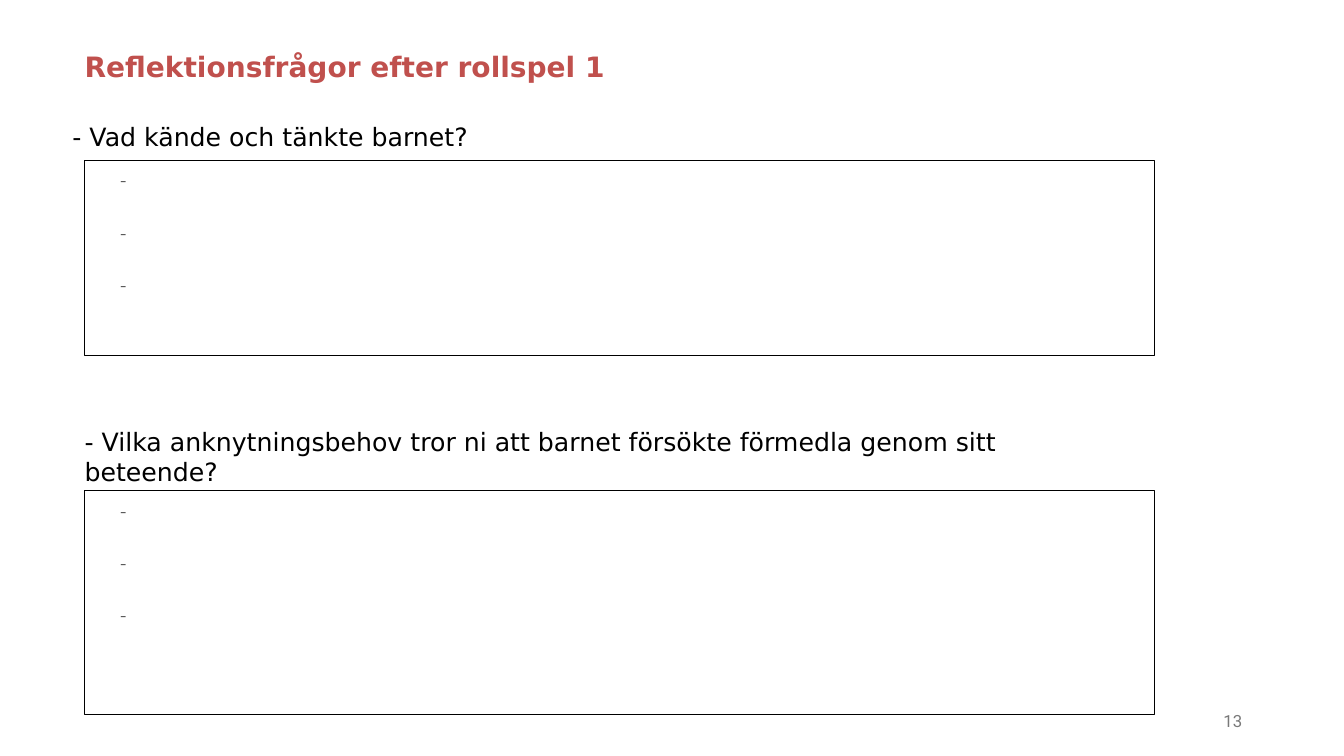
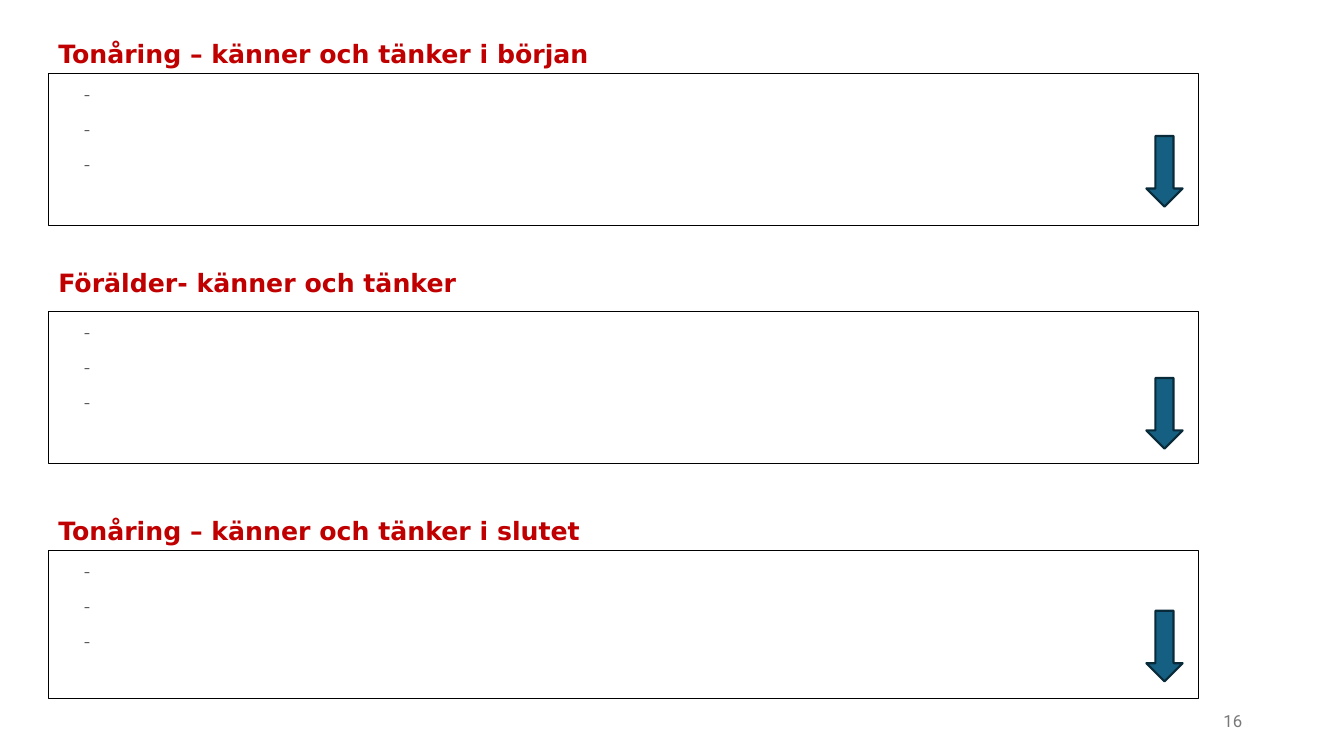
from dataclasses import dataclass

from pptx import Presentation
from pptx.dml.color import RGBColor
from pptx.enum.shapes import MSO_SHAPE as SHAPE
from pptx.enum.text import MSO_ANCHOR as ANCHOR, PP_ALIGN as ALIGN
from pptx.slide import Slide
from pptx.util import Inches, Pt

COLORS = {
    "title": "C0504D",
    "heading": "C00000",
    "text": "000000",
    "dash": "595959",
    "number": "797979",
    "paper": "FFFFFF",
    "arrow": "156082",
    "arrow_line": "092A39",
}


@dataclass(frozen=True)
class TextStyle:
    font: str
    size: int
    color: str
    bold: bool = False


TITLE = TextStyle("DejaVu Sans", 20, "title", True)
QUESTION = TextStyle("DejaVu Sans", 18, "text")
HEADING = TextStyle("DejaVu Sans", 18, "heading", True)
DASH = TextStyle("Cambria", 15, "dash")
NUMBER = TextStyle("Roboto", 12, "number")


@dataclass(frozen=True)
class Question:
    text: str
    left: float
    top: float
    width: float
    height: float
    box_top: float
    box_height: float


@dataclass(frozen=True)
class Stage:
    heading: str
    top: float
    box_top: float
    box_height: float
    arrow_top: float


QUESTIONS = [
    Question("- Vad kände och tänkte barnet?", 0.62, 1.15, 6.67, 0.4, 1.59, 1.94),
    Question(
        "- Vilka anknytningsbehov tror ni att barnet försökte förmedla genom sitt beteende?",
        0.74, 4.18, 10.39, 0.71, 4.87, 2.22,
    ),
]
STAGES = [
    Stage("Tonåring – känner och tänker i början", 0.33, 0.73, 1.51, 1.35),
    Stage("Förälder- känner och tänker", 2.6, 3.09, 1.51, 3.75),
    Stage("Tonåring – känner och tänker i slutet", 5.06, 5.46, 1.47, 6.06),
]


def rgb(name: str) -> RGBColor:
    return RGBColor.from_string(COLORS[name])


def style_paragraph(p, style: TextStyle) -> None:
    p.font.name = style.font
    p.font.size = Pt(style.size)
    p.font.bold = style.bold
    p.font.color.rgb = rgb(style.color)


def add_text(s: Slide, text: str, style: TextStyle, left: float, top: float,
             width: float, height: float, align=ALIGN.LEFT, anchor=ANCHOR.TOP) -> None:
    sp = s.shapes.add_textbox(Inches(left), Inches(top), Inches(width), Inches(height))
    tf = sp.text_frame
    tf.word_wrap = True
    tf.vertical_anchor = anchor
    p = tf.paragraphs[0]
    p.text = text
    p.alignment = align
    style_paragraph(p, style)


def add_preset(s: Slide, kind: SHAPE, left: float, top: float, width: float,
               height: float, fill: str, line: str, line_width: float):
    sp = s.shapes.add_shape(kind, Inches(left), Inches(top), Inches(width), Inches(height))
    sp.shadow.inherit = False
    sp.fill.solid()
    sp.fill.fore_color.rgb = rgb(fill)
    sp.line.color.rgb = rgb(line)
    sp.line.width = Pt(line_width)
    return sp


def add_answer_box(s: Slide, left: float, top: float, width: float, height: float,
                   space_before: int = 0) -> None:
    sp = add_preset(s, SHAPE.RECTANGLE, left, top, width, height, "paper", "text", 0.75)
    tf = sp.text_frame
    tf.vertical_anchor = ANCHOR.TOP
    tf.text = "\n".join("-" * 3)
    for p in tf.paragraphs:
        p.alignment = ALIGN.LEFT
        p.line_spacing = 1.07
        p.space_before = Pt(space_before)
        p.space_after = Pt(6)
        style_paragraph(p, DASH)
        ppr = p._p.get_or_add_pPr()
        ppr.set("marL", str(Inches(0.5)))
        ppr.set("indent", str(Inches(-0.25)))


def add_slide(prs, number: int) -> Slide:
    s = prs.slides.add_slide(prs.slide_layouts[6])
    add_text(s, str(number), NUMBER, 9.42, 6.95, 3, 0.4, ALIGN.RIGHT, ANCHOR.MIDDLE)
    return s


def build_reflection(prs) -> None:
    s = add_slide(prs, 13)
    add_text(s, "Reflektionsfrågor efter rollspel 1", TITLE, 0.74, 0.44, 8.58, 0.44)
    for q in QUESTIONS:
        add_text(s, q.text, QUESTION, q.left, q.top, q.width, q.height)
        add_answer_box(s, 0.84, q.box_top, 10.61, q.box_height, space_before=12)


def build_stages(prs) -> None:
    s = add_slide(prs, 16)
    for stage in STAGES:
        add_text(s, stage.heading, HEADING, 0.48, stage.top, 6.67, 0.4)
        add_answer_box(s, 0.48, stage.box_top, 11.41, stage.box_height)
        add_preset(s, SHAPE.DOWN_ARROW, 11.37, stage.arrow_top, 0.36, 0.7,
                   "arrow", "arrow_line", 1.5)


def main() -> None:
    prs = Presentation()
    prs.slide_width = Inches(13.33)
    prs.slide_height = Inches(7.5)
    build_reflection(prs)
    build_stages(prs)
    prs.save("out.pptx")


if __name__ == "__main__":
    main()
